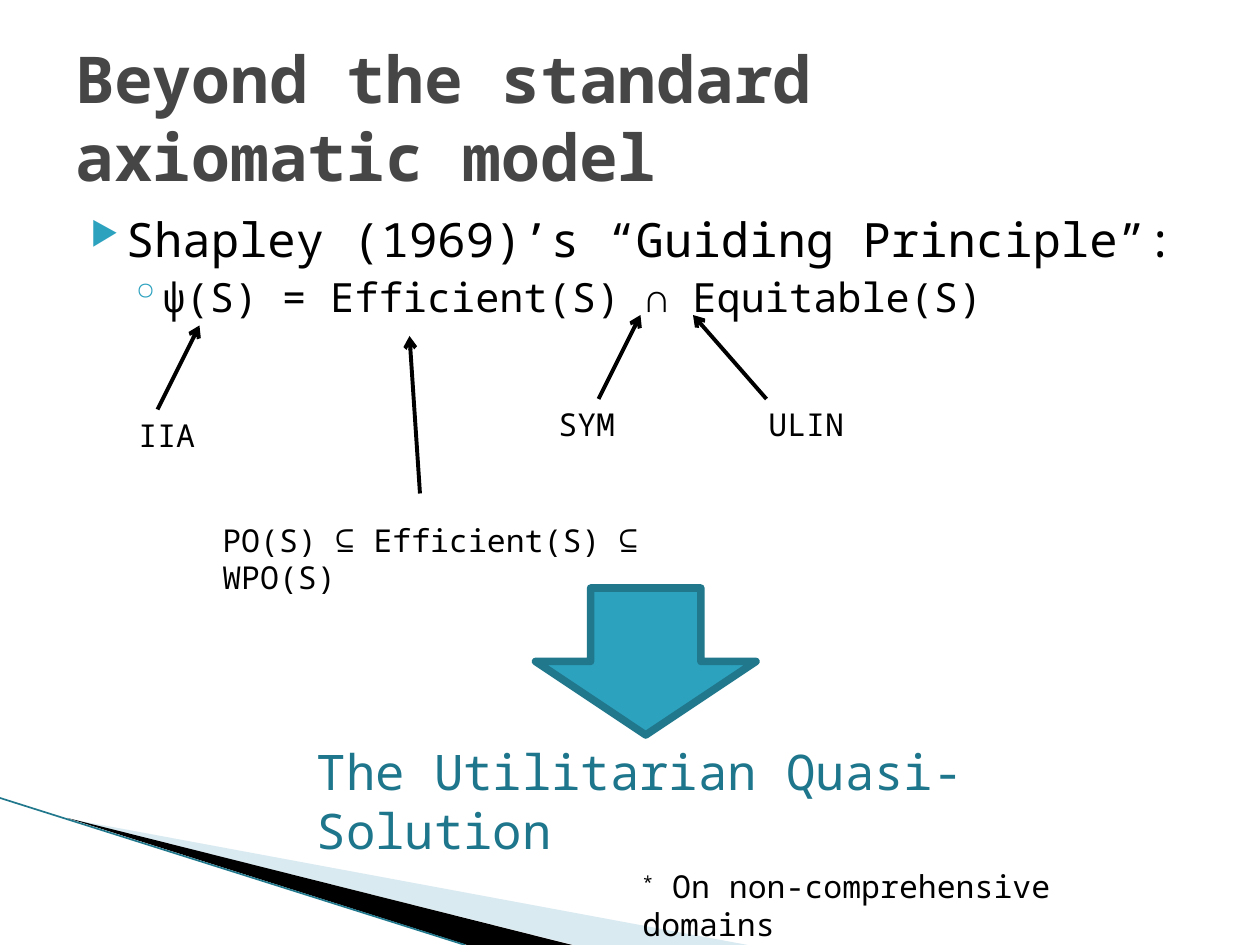
import pptx
import pptx.util
import pptx.dml.color
import pptx.enum.shapes
import pptx.enum.text
import pptx.oxml
import pptx.oxml.ns
import lxml.etree

RGBColor = pptx.dml.color.RGBColor
BLACK = RGBColor(0x00, 0x00, 0x00)
GREY = RGBColor(0x46, 0x46, 0x46)
TEAL = RGBColor(0x2D, 0xA2, 0xBF)
TEAL_EDGE = RGBColor(0x21, 0x78, 0x8D)
TEAL_TEXT = RGBColor(0x1E, 0x76, 0x8C)
PALE_BLUE = RGBColor(0xA0, 0xCB, 0xDC)

FONT = "Noto Sans Mono"
CELL = pptx.util.Inches(1) / 12  # grid of 120 columns by 90 rows
ANCHOR = pptx.enum.text.MSO_ANCHOR

LABEL = {"size": pptx.util.Pt(18), "color": BLACK}
TITLE = {"size": pptx.util.Pt(36.9), "color": GREY, "bold": True}
BODY = {"size": pptx.util.Pt(27), "color": BLACK}
SUB_BODY = {"size": pptx.util.Pt(23), "color": BLACK}
RESULT = {"size": pptx.util.Pt(28), "color": TEAL_TEXT}

# label, its box (column, row, width, height), arrow start, arrow end
CALLOUTS = [
    ("PO(S) ⊆ Efficient(S) ⊆ WPO(S)", (20, 49, 47, 5), (40, 47), (39, 32)),
    ("SYM", (52, 38, 11, 5), (57, 38), (61, 30)),
    ("ULIN", (72, 38, 11, 5), (73, 38), (66, 30)),
    ("IIA", (12, 39, 11, 5), (15, 39), (19, 31)),
]


def grid(*cells):
    return [pptx.util.Emu(round(cell * CELL)) for cell in cells]


def add_element(parent, tag, **attributes):
    child = lxml.etree.SubElement(parent, pptx.oxml.ns.qn(tag))
    for name, value in attributes.items():
        child.set(name, str(value))
    return child


def format_font(font, style):
    font.name = FONT
    for name, value in style.items():
        if name == "color":
            font.color.rgb = value
        else:
            setattr(font, name, value)


def add_span(para, text, style):
    span = para.add_run()
    span.text = text
    format_font(span.font, style)
    return span


def add_box(shapes, place, anchor=ANCHOR.TOP):
    box = shapes.add_textbox(*grid(*place))
    box.text_frame.word_wrap = True
    box.text_frame.vertical_anchor = anchor
    return box.text_frame


def add_text(shapes, text, place, style, anchor=ANCHOR.TOP):
    frame = add_box(shapes, place, anchor)
    add_span(frame.paragraphs[0], text, style)


def set_bullet(para, mark, left, hanging, percent=100):
    properties = para._p.get_or_add_pPr()
    properties.set("marL", str(pptx.util.Inches(left)))
    properties.set("indent", str(-pptx.util.Inches(hanging)))
    color = add_element(properties, "a:buClr")
    add_element(color, "a:srgbClr", val=TEAL)
    add_element(properties, "a:buSzPct", val=percent * 1000)
    add_element(properties, "a:buChar", char=mark)


def add_line(shapes, start, end, color, width, arrow=False):
    line = shapes.add_connector(
        pptx.enum.shapes.MSO_CONNECTOR.STRAIGHT, *grid(*start, *end))
    line.line.color.rgb = color
    line.line.width = pptx.util.Pt(width)
    if arrow:
        add_element(line.line._get_or_add_ln(), "a:tailEnd", type="arrow")
    add_element(line._element.spPr, "a:effectLst")


def add_wedge(shapes, points, color, alpha=100):
    corners = [grid(*point) for point in points]
    builder = shapes.build_freeform(*corners[0], scale=1.0)
    builder.add_line_segments(corners[1:], close=True)
    wedge = builder.convert_to_shape()
    wedge.shadow.inherit = False
    wedge.fill.solid()
    wedge.fill.fore_color.rgb = color
    wedge.line.fill.background()
    if alpha < 100:
        tint = wedge._element.spPr.find(".//" + pptx.oxml.ns.qn("a:srgbClr"))
        add_element(tint, "a:alpha", val=alpha * 1000)


def add_corner(shapes):
    add_wedge(shapes, [(6.6, 78), (71.2, 90), (54.7, 90)], PALE_BLUE, 40)
    add_wedge(shapes, [(6.4, 77.9), (54.5, 90), (44.5, 90)], BLACK)
    add_line(shapes, (0, 76), (44.3, 90), TEAL_EDGE, 0.95)


def add_body(shapes):
    frame = add_box(shapes, (6, 19.4, 108, 59.4))
    para = frame.paragraphs[0]
    set_bullet(para, "▶", 0.4, 0.28, 68)
    add_span(para, "Shapley (1969)’s “Guiding Principle”:", BODY)
    para = frame.add_paragraph()
    para.level = 1
    para.space_before = pptx.util.Pt(3.2)
    set_bullet(para, "◦", 0.68, 0.25)
    add_span(para, "ψ(S) = Efficient(S) ∩ Equitable(S)", SUB_BODY)


def add_callout(shapes, text, place, start, end):
    group = shapes.add_group_shape()
    add_text(group.shapes, text, place, LABEL)
    add_line(group.shapes, start, end, BLACK, 2.25, arrow=True)


def add_down_arrow(shapes):
    arrow = shapes.add_shape(
        pptx.enum.shapes.MSO_SHAPE.DOWN_ARROW, *grid(51, 56, 21, 14))
    arrow.shadow.inherit = False
    arrow.fill.solid()
    arrow.fill.fore_color.rgb = TEAL
    arrow.line.color.rgb = TEAL_EDGE
    arrow.line.width = pptx.util.Pt(4.33)


def add_footnote(shapes):
    para = add_box(shapes, (60, 82, 55, 5)).paragraphs[0]
    star = add_span(para, "*", LABEL)
    star.font._element.set("baseline", "30000")
    add_span(para, " On non-comprehensive domains", LABEL)


def main():
    deck = pptx.Presentation()
    deck.slide_width, deck.slide_height = grid(120, 90)
    page = deck.slides.add_slide(deck.slide_layouts[6])
    shapes = page.shapes

    # Corner decoration
    add_corner(shapes)

    # Title and formula
    add_body(shapes)
    add_text(shapes, "Beyond the standard axiomatic model",
             (6, 3.6, 108, 15), TITLE, ANCHOR.MIDDLE)

    # Axioms pointing at the formula
    for callout in CALLOUTS:
        add_callout(shapes, *callout)

    # Conclusion
    add_down_arrow(shapes)
    add_text(shapes, "The Utilitarian Quasi-Solution", (29, 70, 71, 7), RESULT)
    add_footnote(shapes)

    deck.save("out.pptx")


if __name__ == "__main__":
    main()
